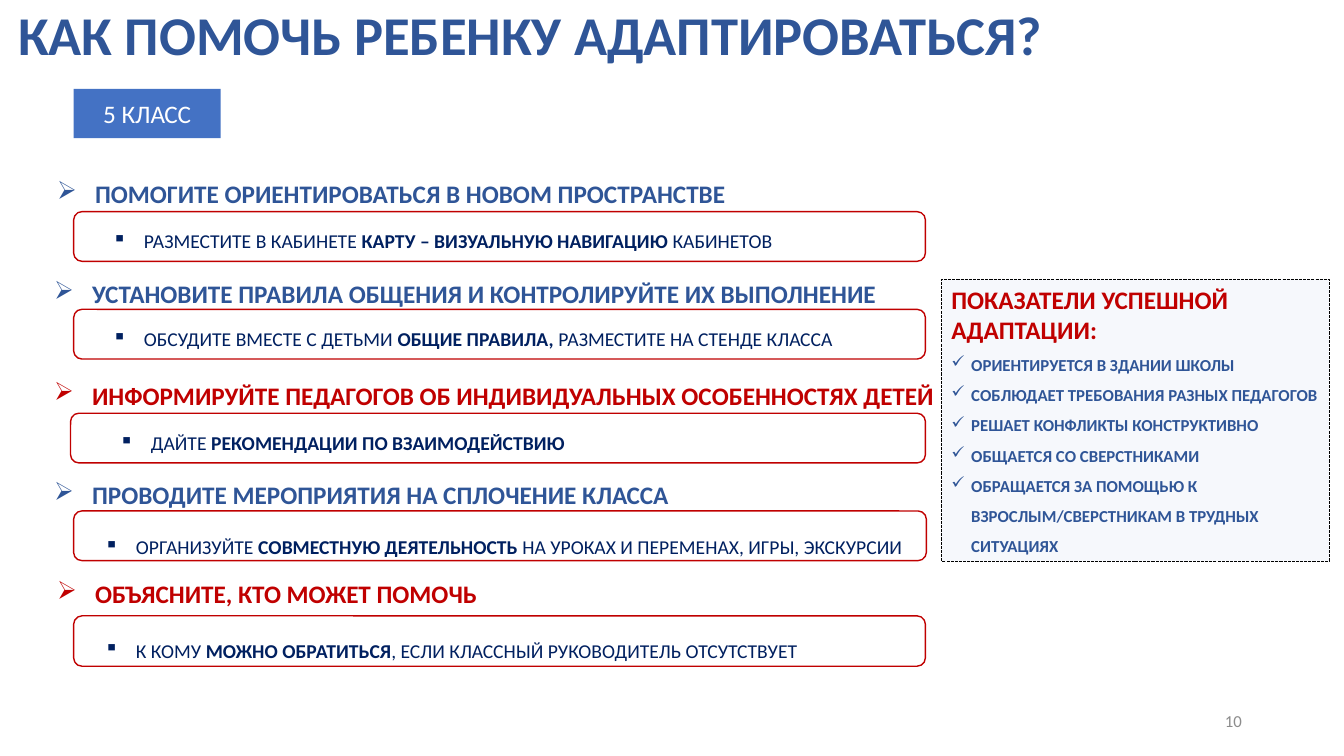
from pptx import Presentation
from pptx.dml.color import RGBColor
from pptx.enum.dml import MSO_LINE
from pptx.enum.shapes import MSO_SHAPE
from pptx.enum.text import MSO_ANCHOR, MSO_AUTO_SIZE, PP_ALIGN
from pptx.oxml.ns import qn
from pptx.util import Pt
from lxml.etree import SubElement

BLUE = RGBColor(0x2F, 0x55, 0x97)
ACCENT = RGBColor(0x44, 0x72, 0xC4)
NAVY = RGBColor(0x00, 0x20, 0x60)
RED = RGBColor(0xC0, 0x00, 0x00)
PALE = RGBColor(0xF6, 0xF8, 0xFC)
GRAY = RGBColor(0x8C, 0x8C, 0x8C)
WHITE = RGBColor(0xFF, 0xFF, 0xFF)
BLACK = RGBColor(0x00, 0x00, 0x00)

SECTIONS = [
    ("ПОМОГИТЕ ОРИЕНТИРОВАТЬСЯ В НОВОМ ПРОСТРАНСТВЕ", BLUE,
     ["РАЗМЕСТИТЕ В КАБИНЕТЕ ", "КАРТУ – ВИЗУАЛЬНУЮ НАВИГАЦИЮ ", "КАБИНЕТОВ"],
     (52.6, 151.2, 608.4, 35.5), (-18.8, -38.2), (-20.9, 0.7)),
    ("УСТАНОВИТЕ ПРАВИЛА ОБЩЕНИЯ И КОНТРОЛИРУЙТЕ ИХ ВЫПОЛНЕНИЕ", BLUE,
     ["ОБСУДИТЕ ВМЕСТЕ С ДЕТЬМИ ", "ОБЩИЕ ПРАВИЛА, ", "РАЗМЕСТИТЕ НА СТЕНДЕ КЛАССА"],
     (52.6, 221, 608.4, 35.5), (-20.9, -36.7), (-20.9, 0.7)),
    ("ИНФОРМИРУЙТЕ ПЕДАГОГОВ ОБ ИНДИВИДУАЛЬНЫХ ОСОБЕННОСТЯХ ДЕТЕЙ", RED,
     ["ДАЙТЕ ", "РЕКОМЕНДАЦИИ ПО ВЗАИМОДЕЙСТВИЮ"],
     (50.4, 295.2, 610.6, 35.5), (-18.7, -38.2), (-13.7, 0.7)),
    ("ПРОВОДИТЕ МЕРОПРИЯТИЯ НА СПЛОЧЕНИЕ КЛАССА", BLUE,
     ["ОРГАНИЗУЙТЕ ", "СОВМЕСТНУЮ ДЕЯТЕЛЬНОСТЬ ", "НА УРОКАХ И ПЕРЕМЕНАХ, ИГРЫ, ЭКСКУРСИИ"],
     (52.6, 365, 609.1, 35.5), (-20.9, -36.7), (-26.6, 5)),
    ("ОБЪЯСНИТЕ, КТО МОЖЕТ ПОМОЧЬ", RED,
     ["К КОМУ ", "МОЖНО ОБРАТИТЬСЯ", ", ЕСЛИ КЛАССНЫЙ РУКОВОДИТЕЛЬ ОТСУТСТВУЕТ"],
     (52.6, 439.9, 608.4, 36), (-18.8, -41), (-26.6, 4.3)),
]
INDICATORS = [
    "ОРИЕНТИРУЕТСЯ В ЗДАНИИ ШКОЛЫ",
    "СОБЛЮДАЕТ ТРЕБОВАНИЯ РАЗНЫХ ПЕДАГОГОВ",
    "РЕШАЕТ КОНФЛИКТЫ КОНСТРУКТИВНО",
    "ОБЩАЕТСЯ СО СВЕРСТНИКАМИ",
    "ОБРАЩАЕТСЯ ЗА ПОМОЩЬЮ К ВЗРОСЛЫМ/СВЕРСТНИКАМ В ТРУДНЫХ СИТУАЦИЯХ",
]


def write(p, text, size, color, bold=False, align=PP_ALIGN.LEFT, spacing=None,
          bullet=None, margin=0, hanging=0):
    p.alignment = align
    if spacing:
        p.line_spacing = spacing
    if bullet:
        pPr = p._p.get_or_add_pPr()
        pPr.set("marL", str(Pt(margin)))
        pPr.set("indent", str(-Pt(hanging)))
        SubElement(pPr, qn("a:buChar"), char=bullet)
    runs = [text] if isinstance(text, str) else text
    for i, part in enumerate(runs):
        r = p.add_run()
        r.text = part
        r.font.name = "Calibri"
        r.font.size = Pt(size)
        r.font.bold = bold or i == 1
        r.font.color.rgb = color


def add_box(slide, box, shape=MSO_SHAPE.RECTANGLE, fill=None, line=None, weight=1,
            anchor=MSO_ANCHOR.MIDDLE):
    sp = slide.shapes.add_shape(shape, *map(Pt, box))
    sp.shadow.inherit = False
    if fill is None:
        sp.fill.background()
    else:
        sp.fill.solid()
        sp.fill.fore_color.rgb = fill
    if line is None:
        sp.line.fill.background()
    else:
        sp.line.color.rgb = line
        sp.line.width = Pt(weight)
    sp.text_frame.word_wrap = True
    sp.text_frame.vertical_anchor = anchor
    return sp


def add_text(slide, box, text, anchor=MSO_ANCHOR.TOP, grow=True, **fmt):
    tf = slide.shapes.add_textbox(*map(Pt, box)).text_frame
    tf.word_wrap = True
    tf.vertical_anchor = anchor
    if grow:
        tf.auto_size = MSO_AUTO_SIZE.SHAPE_TO_FIT_TEXT
    write(tf.paragraphs[0], text, **fmt)


def add_title(slide, box):
    sp = add_box(slide, box, fill=WHITE, line=WHITE)
    write(sp.text_frame.paragraphs[0], "КАК ПОМОЧЬ РЕБЕНКУ АДАПТИРОВАТЬСЯ?",
          39, BLUE, bold=True, spacing=0.9)


def add_grade(slide, box):
    sp = add_box(slide, box, fill=ACCENT)
    write(sp.text_frame.paragraphs[0], "5 КЛАСС", 18, WHITE, align=PP_ALIGN.CENTER)


def add_section(slide, box, heading, color, advice, heading_shift, advice_shift):
    left, top, width, height = box
    add_box(slide, box, MSO_SHAPE.ROUNDED_RECTANGLE, line=RED)
    dx, dy = heading_shift
    add_text(slide, (left + dx, top + dy, 684, 36.7), heading, size=18, color=color,
             bold=True, spacing=1.5, bullet="➢", margin=27, hanging=27)
    dx, dy = advice_shift
    add_text(slide, (left + dx, top + dy, width + 20, 30.2), advice, size=14, color=NAVY,
             spacing=1.5, bullet="▪", margin=64, hanging=22.5)


def add_indicators(slide, box):
    sp = add_box(slide, box, fill=PALE, line=BLACK, weight=0.75, anchor=MSO_ANCHOR.TOP)
    sp.line.dash_style = MSO_LINE.SQUARE_DOT
    tf = sp.text_frame
    tf.auto_size = MSO_AUTO_SIZE.SHAPE_TO_FIT_TEXT
    write(tf.paragraphs[0], "ПОКАЗАТЕЛИ УСПЕШНОЙ АДАПТАЦИИ:", 18, RED, bold=True)
    for text in INDICATORS:
        write(tf.add_paragraph(), text, 12, BLUE, bold=True, spacing=1.5,
              bullet="✓", margin=14.2, hanging=14.2)


def main():
    prs = Presentation()
    prs.slide_width, prs.slide_height = Pt(960), Pt(540)
    s = prs.slides.add_slide(prs.slide_layouts[6])
    add_title(s, (5.8, 4.3, 766, 46))
    add_grade(s, (52.6, 63.4, 105, 35.3))
    add_indicators(s, (672.5, 199.4, 277, 201.6))
    for heading, color, advice, box, heading_shift, advice_shift in SECTIONS:
        add_section(s, box, heading, color, advice, heading_shift, advice_shift)
    add_text(s, (678.2, 500.4, 216, 28.8), "10", anchor=MSO_ANCHOR.MIDDLE, grow=False,
             size=12, color=GRAY, align=PP_ALIGN.RIGHT)
    prs.save("out.pptx")


if __name__ == "__main__":
    main()
